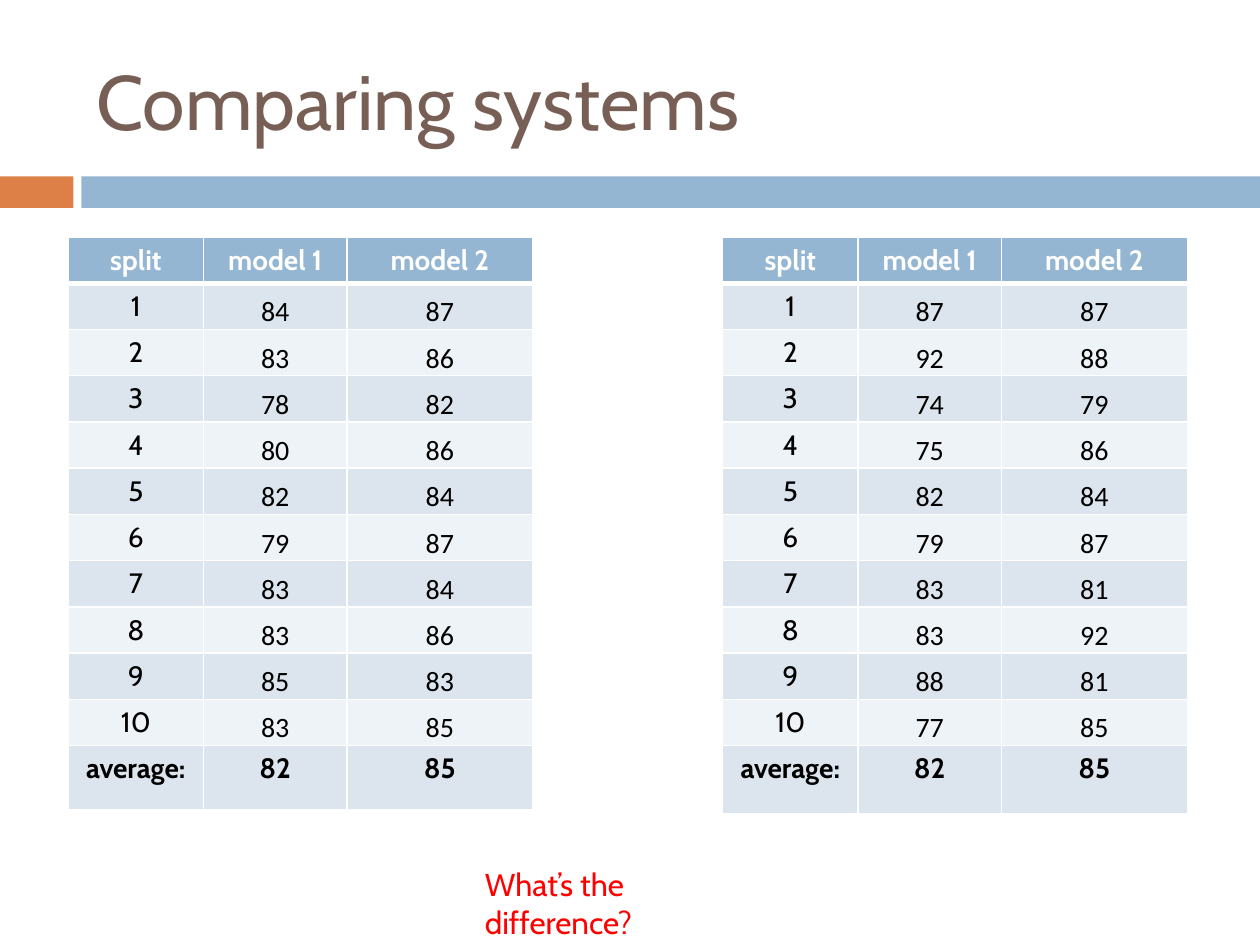
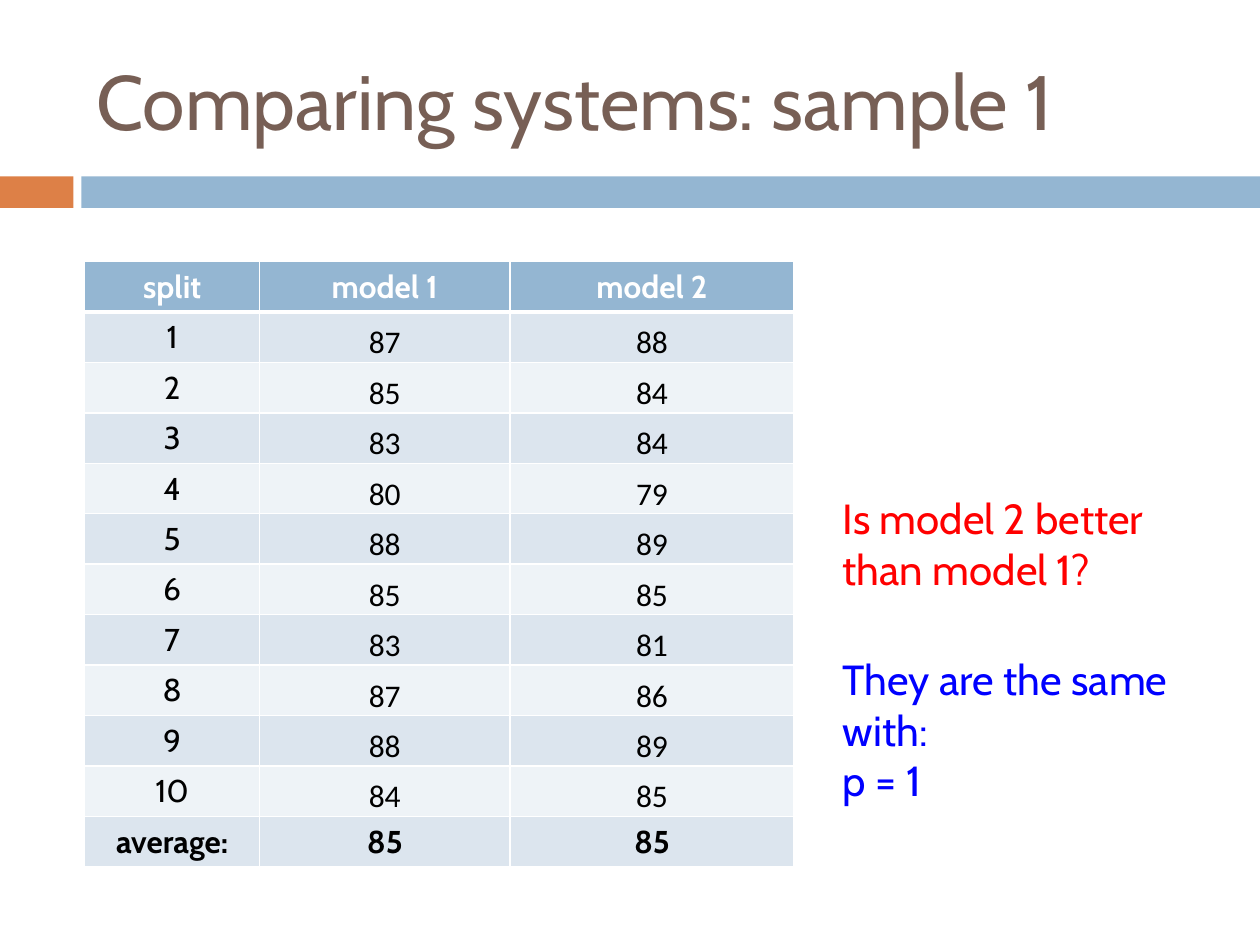
from dataclasses import dataclass

from lxml.etree import SubElement
from pptx import Presentation
from pptx.dml.color import RGBColor
from pptx.enum.shapes import MSO_SHAPE
from pptx.enum.text import MSO_ANCHOR, MSO_AUTO_SIZE, PP_ALIGN
from pptx.oxml.ns import qn
from pptx.util import Pt


@dataclass(frozen=True)
class Theme:
    brown: str = "775F55"
    orange: str = "DD8047"
    blue: str = "94B6D2"
    odd_row: str = "DCE5EE"
    even_row: str = "EEF3F7"
    white: str = "FFFFFF"
    black: str = "000000"
    question: str = "FF0000"
    answer: str = "0000FF"
    font: str = "Cabin"
    score_font: str = "Calibri"
    title_size: float = 44
    note_size: float = 24
    body_size: float = 18
    small_size: float = 16


THEME = Theme()


def write_text(frame, text, size=THEME.body_size, color=THEME.black,
               font=THEME.font, bold=False, align=PP_ALIGN.LEFT):
    """Fill a text frame, one paragraph per line of text."""
    for index, line in enumerate(text.split("\n")):
        paragraph = frame.add_paragraph() if index else frame.paragraphs[0]
        paragraph.alignment = align
        run = paragraph.add_run()
        run.text = line
        run.font.name = font
        run.font.size = Pt(size)
        run.font.bold = bold
        run.font.color.rgb = RGBColor.from_string(color)


def set_borders(cell, color, **widths):
    """Draw cell borders; widths are given by side: L, R, T, B."""
    properties = cell._tc.get_or_add_tcPr()
    for side, width in widths.items():
        line = SubElement(properties, qn(f"a:ln{side}"), w=str(Pt(width)))
        SubElement(SubElement(line, qn("a:solidFill")), qn("a:srgbClr"), val=color)


class Deck:
    def __init__(self, theme):
        self.theme = theme
        self.presentation = Presentation()
        self.presentation.slide_width = Pt(720)
        self.presentation.slide_height = Pt(540)
        self.slide = None

    def start_slide(self, title):
        """Add a slide with the shared bands and title."""
        theme = self.theme
        self.slide = self.presentation.slides.add_slide(
            self.presentation.slide_layouts[6])
        self.band(0, 42, theme.orange)
        self.band(46.5, 673.5, theme.blue)
        self.text(title, 48, 18, 642, 78, anchor=MSO_ANCHOR.MIDDLE,
                  size=theme.title_size, color=theme.brown)

    def band(self, left, width, color):
        band = self.slide.shapes.add_shape(
            MSO_SHAPE.RECTANGLE, Pt(left), Pt(100.8), Pt(width), Pt(18))
        band.shadow.inherit = False
        band.fill.solid()
        band.fill.fore_color.rgb = RGBColor.from_string(color)
        band.line.fill.background()

    def text(self, text, left, top, width, height, anchor=MSO_ANCHOR.TOP,
             grow=False, **style):
        frame = self.slide.shapes.add_textbox(
            Pt(left), Pt(top), Pt(width), Pt(height)).text_frame
        frame.word_wrap = True
        frame.vertical_anchor = anchor
        if grow:
            frame.auto_size = MSO_AUTO_SIZE.SHAPE_TO_FIT_TEXT
        write_text(frame, text, **style)

    def score_table(self, scores, averages, left, top, columns, row_height,
                    last_height, size):
        """Table of scores per split, with a header and an average row."""
        rows = [("split", "model 1", "model 2"),
                *((split, *pair) for split, pair in enumerate(scores, 1)),
                ("average:", *averages)]
        heights = [row_height] * (len(rows) - 1) + [last_height]
        table = self.slide.shapes.add_table(
            len(rows), len(columns), Pt(left), Pt(top),
            Pt(sum(columns)), Pt(sum(heights))).table
        for column, width in zip(table.columns, columns):
            column.width = Pt(width)
        for row, height in zip(table.rows, heights):
            row.height = Pt(height)
        for r, values in enumerate(rows):
            for c, value in enumerate(values):
                self.score_cell(table.cell(r, c), value, r, c, len(rows) - 1, size)

    def score_cell(self, cell, value, row, column, last_row, size):
        theme = self.theme
        header = row == 0
        is_score = column > 0 and 0 < row < last_row
        set_borders(cell, theme.white, L=1, R=1, T=3 if row == 1 else 1,
                    B=3 if header else 1)
        cell.fill.solid()
        cell.fill.fore_color.rgb = RGBColor.from_string(
            theme.blue if header else theme.odd_row if row % 2 else theme.even_row)
        if is_score:
            cell.vertical_anchor = MSO_ANCHOR.BOTTOM
            cell.margin_left = cell.margin_right = cell.margin_top = Pt(0.75)
            cell.margin_bottom = Pt(0)
        write_text(cell.text_frame, str(value), size=size,
                   color=theme.white if header else theme.black,
                   font=theme.score_font if is_score else theme.font,
                   bold=row in (0, last_row), align=PP_ALIGN.CENTER)


STEADY_SCORES = [(84, 87), (83, 86), (78, 82), (80, 86), (82, 84),
                 (79, 87), (83, 84), (83, 86), (85, 83), (83, 85)]
VARIED_SCORES = [(87, 87), (92, 88), (74, 79), (75, 86), (82, 84),
                 (79, 87), (83, 81), (83, 92), (88, 81), (77, 85)]
SAMPLE_1_SCORES = [(87, 88), (85, 84), (83, 84), (80, 79), (88, 89),
                   (85, 85), (83, 81), (87, 86), (88, 89), (84, 85)]


def main():
    deck = Deck(THEME)

    # Two sets of splits with equal averages
    deck.start_slide("Comparing systems")
    for scores, left, last_height in ((STEADY_SCORES, 38.9, 36.5),
                                      (VARIED_SCORES, 412.9, 39)):
        deck.score_table(scores, (82, 85), left, 135.4, (77.5, 81.8, 106.4),
                         24, last_height, THEME.small_size)
    deck.text("What’s the difference?", 270, 491, 180, 29, grow=True,
              color=THEME.question)

    # Sample 1 with its question and answer
    deck.start_slide("Comparing systems: sample 1")
    deck.score_table(SAMPLE_1_SCORES, (85, 85), 48.4, 149.4, (100, 143, 162.4),
                     28, 28, THEME.body_size)
    deck.text("Is model 2 better than model 1?", 474.5, 278, 215, 65.5,
              grow=True, size=THEME.note_size, color=THEME.question)
    deck.text("They are the same with:\np = 1", 474.5, 370, 242.5, 65.5,
              grow=True, size=THEME.note_size, color=THEME.answer)

    deck.presentation.save("out.pptx")


if __name__ == "__main__":
    main()
